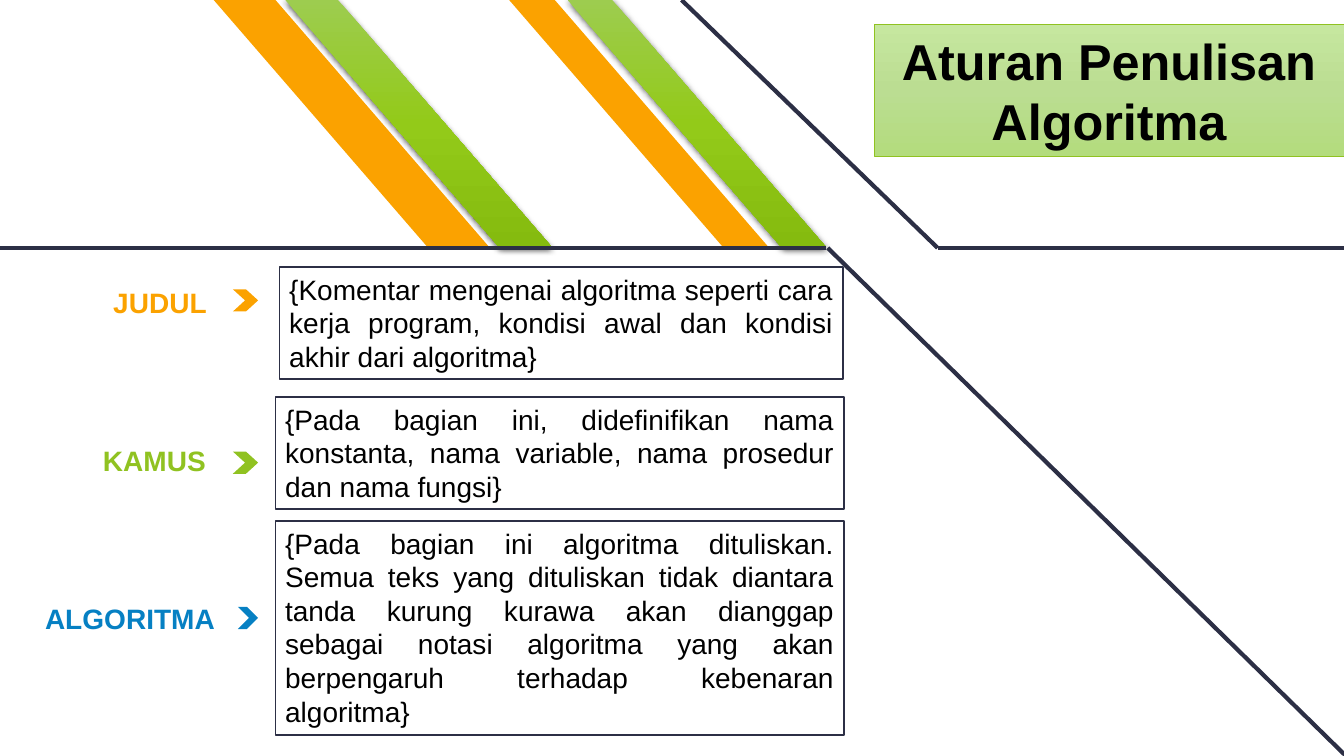
import copy
from dataclasses import dataclass

import pptx
import pptx.dml.color
import pptx.enum.shapes
import pptx.enum.text
import pptx.oxml
import pptx.oxml.ns
import pptx.util
from pptx.util import Inches, Pt

SHAPE = pptx.enum.shapes.MSO_SHAPE
ALIGN = pptx.enum.text.PP_ALIGN
ANCHOR = pptx.enum.text.MSO_ANCHOR
qn = pptx.oxml.ns.qn


def rgb(value):
    return pptx.dml.color.RGBColor.from_string(value)


@dataclass(frozen=True)
class Theme:
    font: str = "Arial"
    title_size: int = 36
    text_size: int = 20
    text: str = "000000"
    paper: str = "FFFFFF"
    navy: str = "2C2F45"
    orange: str = "FBA200"
    green: str = "90C221"
    blue: str = "0680C3"
    stripe_gradient: tuple = ("9DCC4F", "93CA19", "85BB0F")
    title_gradient: tuple = ("C6E79F", "BBDD92", "B3DC7D")


class SlideBuilder:
    def __init__(self, slide, theme):
        self.slide = slide
        self.theme = theme

    def fill_gradient(self, shape, colors):
        """Fill from top to bottom with evenly spaced colours."""
        shape.fill.gradient()
        shape.fill.gradient_angle = 270
        stop_list = shape._element.spPr.find(".//" + qn("a:gsLst"))
        while len(stop_list) < len(colors):
            stop_list.append(copy.deepcopy(stop_list[-1]))
        for index, (stop, color) in enumerate(zip(shape.fill.gradient_stops, colors)):
            stop.position = index / (len(colors) - 1)
            stop.color.rgb = rgb(color)

    def set_text(self, shape, text, size, color, align, bold=False, anchor=ANCHOR.TOP):
        frame = shape.text_frame
        frame.word_wrap = True
        frame.auto_size = pptx.enum.text.MSO_AUTO_SIZE.NONE
        frame.vertical_anchor = anchor
        frame.text = text
        paragraph = frame.paragraphs[0]
        paragraph.alignment = align
        font = paragraph.font
        font.name, font.size, font.bold = self.theme.font, Pt(size), bold
        font.color.rgb = rgb(color)

    def shape(self, kind, left, top, width, height, color=None):
        shape = self.slide.shapes.add_shape(
            kind, Inches(left), Inches(top), Inches(width), Inches(height))
        shape.shadow.inherit = False
        shape.line.fill.background()
        if color:
            shape.fill.solid()
            shape.fill.fore_color.rgb = rgb(color)
        return shape

    def stripe(self, left, width, color=None):
        """Draw a slanted band; without a colour it is a shaded green one."""
        band = self.shape(SHAPE.PARALLELOGRAM, left, 0, width, 2.46, color)
        band.adjustments[0] = 0.865
        properties = band._element.spPr
        properties.find(qn("a:xfrm")).set("flipH", "1")
        if color is None:
            self.fill_gradient(band, self.theme.stripe_gradient)
            properties.find(qn("a:effectLst")).append(pptx.oxml.parse_xml(
                f'<a:outerShdw {pptx.oxml.ns.nsdecls("a")} blurRad="{Pt(4.5)}" '
                f'dist="{Pt(1.5)}" dir="5400000" rotWithShape="0">'
                '<a:srgbClr val="000000"><a:alpha val="63000"/></a:srgbClr>'
                '</a:outerShdw>'))

    def line(self, x1, y1, x2, y2):
        line = self.slide.shapes.add_connector(
            pptx.enum.shapes.MSO_CONNECTOR.STRAIGHT,
            Inches(x1), Inches(y1), Inches(x2), Inches(y2))
        line.line.color.rgb = rgb(self.theme.navy)
        line.line.width = Pt(3)
        line._element.spPr.append(pptx.oxml.parse_xml(
            f'<a:effectLst {pptx.oxml.ns.nsdecls("a")}/>'))

    def title(self, text):
        title = self.slide.shapes.title
        title.left, title.top = Inches(8.67), Inches(0.24)
        title.width, title.height = Inches(4.66), Inches(1.31)
        self.fill_gradient(title, self.theme.title_gradient)
        title.line.color.rgb = rgb(self.theme.green)
        title.line.width = Pt(0.5)
        self.set_text(title, text, self.theme.title_size, self.theme.text,
                      ALIGN.CENTER, bold=True, anchor=ANCHOR.MIDDLE)
        title.text_frame.paragraphs[0].line_spacing = 1.0

    def label(self, text, color, left, top, width):
        label = self.slide.shapes.add_textbox(
            Inches(left), Inches(top), Inches(width), Inches(0.44))
        self.set_text(label, text, self.theme.text_size, color, ALIGN.RIGHT, bold=True)

    def chevron(self, color, top, width):
        """Draw a pointer whose tip meets the common right edge."""
        chevron = self.shape(SHAPE.CHEVRON, 2.56 - width, top, width, 0.22, color)
        chevron.adjustments[0] = 0.549

    def description(self, text, left, top, width, height):
        box = self.shape(SHAPE.RECTANGLE, left, top, width, height, self.theme.paper)
        box.line.color.rgb = rgb(self.theme.navy)
        box.line.width = Pt(1)
        self.set_text(box, text, self.theme.text_size, self.theme.text, ALIGN.JUSTIFY)


def main():
    theme = Theme()
    presentation = pptx.Presentation()
    presentation.slide_width, presentation.slide_height = Inches(13.33), Inches(7.5)
    slide = presentation.slides.add_slide(presentation.slide_layouts[5])
    builder = SlideBuilder(slide, theme)

    for left, width, color in (
        (5.63, 2.57, None),
        (5.05, 2.58, theme.orange),
        (2.12, 2.74, theme.orange),
        (2.83, 2.65, None),
    ):
        builder.stripe(left, width, color)

    horizon = 2.46
    builder.line(6.76, 0, 9.3, horizon)
    builder.line(13.33, horizon, 9.3, horizon)
    builder.line(13.35, 7.5, 8.21, horizon)
    builder.line(0, horizon, 8.19, horizon)

    builder.title("Aturan Penulisan Algoritma")

    # Heading, colour, label (left, top, width), chevron (top, width), box, text
    sections = (
        ("JUDUL", theme.orange, (0.22, 2.78, 1.93), (2.87, 0.25),
         (2.77, 2.65, 5.59, 1.11),
         "{Komentar mengenai algoritma seperti cara kerja program, "
         "kondisi awal dan kondisi akhir dari algoritma}"),
        ("KAMUS", theme.green, (0.2, 4.35, 1.94), (4.48, 0.25),
         (2.73, 3.94, 5.64, 1.11),
         "{Pada bagian ini, didefinifikan nama konstanta, nama variable, "
         "nama prosedur dan nama fungsi}"),
        ("ALGORITMA", theme.blue, (0.15, 5.92, 2.08), (6.02, 0.2),
         (2.73, 5.17, 5.64, 2.12),
         "{Pada bagian ini algoritma dituliskan. Semua teks yang dituliskan "
         "tidak diantara tanda kurung kurawa akan dianggap sebagai notasi "
         "algoritma yang akan berpengaruh terhadap kebenaran algoritma}"),
    )
    for heading, color, label_area, chevron_area, box_area, text in sections:
        builder.label(heading, color, *label_area)
        builder.chevron(color, *chevron_area)
        builder.description(text, *box_area)

    presentation.save("out.pptx")


if __name__ == "__main__":
    main()
